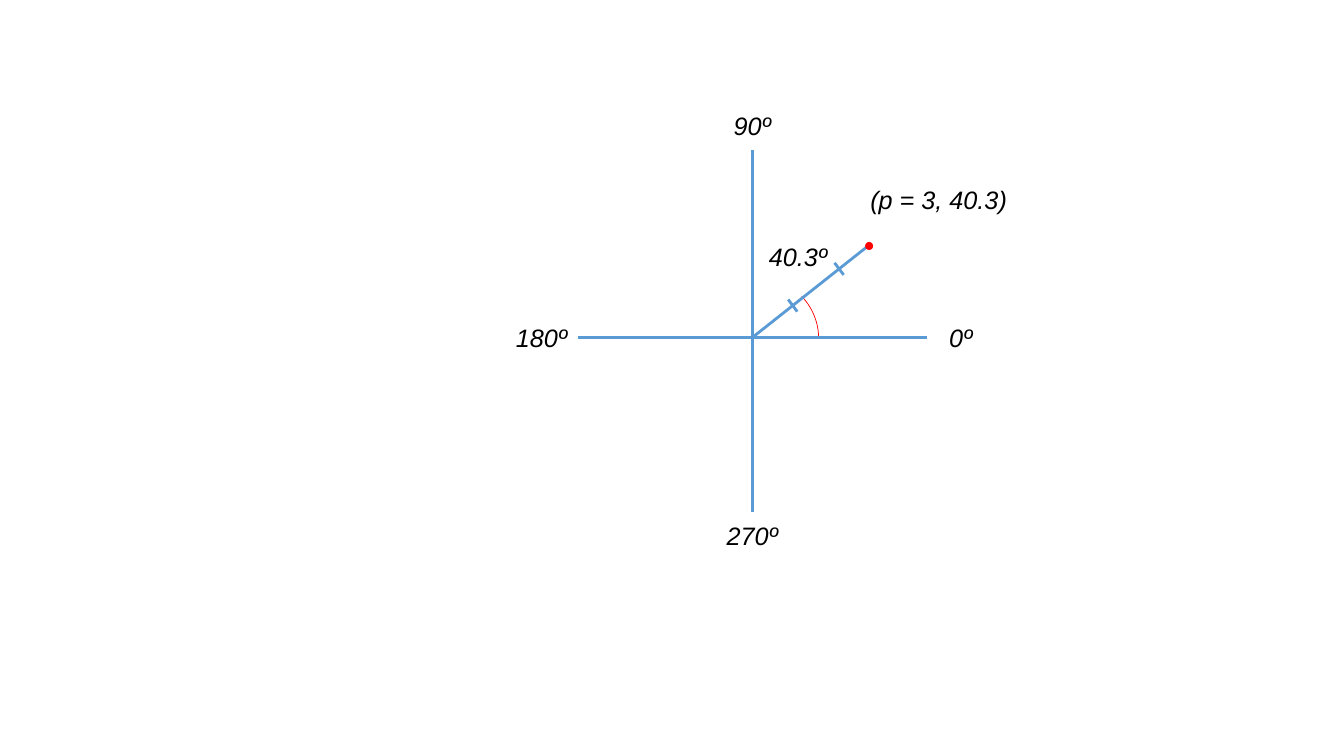
from lxml import etree
from pptx import Presentation
from pptx.dml.color import RGBColor
from pptx.enum import shapes, text
from pptx.oxml import ns
from pptx.util import Inches, Pt

# Content
BLUE, RED, BLACK = "5B9BD5", "FF0000", "000000"
ORIGIN = (7.46, 3.35)
POINT = (8.61, 2.44)
AXES = [((7.46, 1.49), (7.46, 5.08)), ((5.73, 3.35), (9.19, 3.35))]
TICKS = [0.75, 0.35]  # share of the way from origin to point
TICK_HALF = (0.045, 0.06)
DOT = 0.08
ARC_BOX = (6.79, 2.73, 1.33, 1.25)
ARC_START = 192.09
LABELS = [  # text, left, top, width
    ("90º", 7.17, 1.05, 0.58),
    ("0º", 9.31, 3.15, 0.44),
    ("270º", 7.1, 5.11, 0.72),
    ("180º", 5.01, 3.15, 0.72),
    ("(p = 3, 40.3)", 8.49, 1.78, 1.64),
    ("40.3º", 7.52, 2.34, 0.79),
]

prs = Presentation()
prs.slide_width, prs.slide_height = Inches(13.33), Inches(7.5)
s = prs.slides.add_slide(prs.slide_layouts[6])


def color(fmt, hex_color):
    fmt.rgb = RGBColor.from_string(hex_color)


def add_line(start, end, width=2):
    c = s.shapes.add_connector(shapes.MSO_CONNECTOR.STRAIGHT,
                               *map(Inches, (*start, *end)))
    color(c.line.color, BLUE)
    c.line.width = Pt(width)
    etree.SubElement(c._element.spPr, ns.qn("a:effectLst"))


def add_shape(kind, box):
    sp = s.shapes.add_shape(kind, *map(Inches, box))
    sp.shadow.inherit = False
    return sp


def add_text(content, left, top, width, height=0.4, size=18, font="Arial",
             hex_color=BLACK, italic=True, align=text.PP_ALIGN.CENTER):
    tf = s.shapes.add_textbox(*map(Inches, (left, top, width, height))).text_frame
    tf.word_wrap = False
    tf.auto_size = text.MSO_AUTO_SIZE.SHAPE_TO_FIT_TEXT
    p = tf.paragraphs[0]
    p.alignment = align
    r = p.add_run()
    r.text = content
    r.font.size, r.font.name, r.font.italic = Pt(size), font, italic
    color(r.font.color, hex_color)


# Angle arc
arc = add_shape(shapes.MSO_SHAPE.ARC, ARC_BOX)
arc.adjustments[0], arc.adjustments[1] = ARC_START, 0
arc.fill.background()
color(arc.line.color, RED)
arc.line.width = Pt(0.5)

# Axes and labels
for start, end in AXES:
    add_line(start, end)
for label in LABELS:
    add_text(*label)

# Radius with its unit ticks
add_line(ORIGIN, POINT)
dx, dy = TICK_HALF
for share in TICKS:
    x, y = (o + share * (e - o) for o, e in zip(ORIGIN, POINT))
    add_line((x - dx, y - dy), (x + dx, y + dy))

# Point
dot = add_shape(shapes.MSO_SHAPE.OVAL,
                (POINT[0] + 0.01 - DOT / 2, POINT[1] - DOT / 2, DOT, DOT))
dot.fill.solid()
color(dot.fill.fore_color, RED)
dot.line.fill.background()

prs.save("out.pptx")
